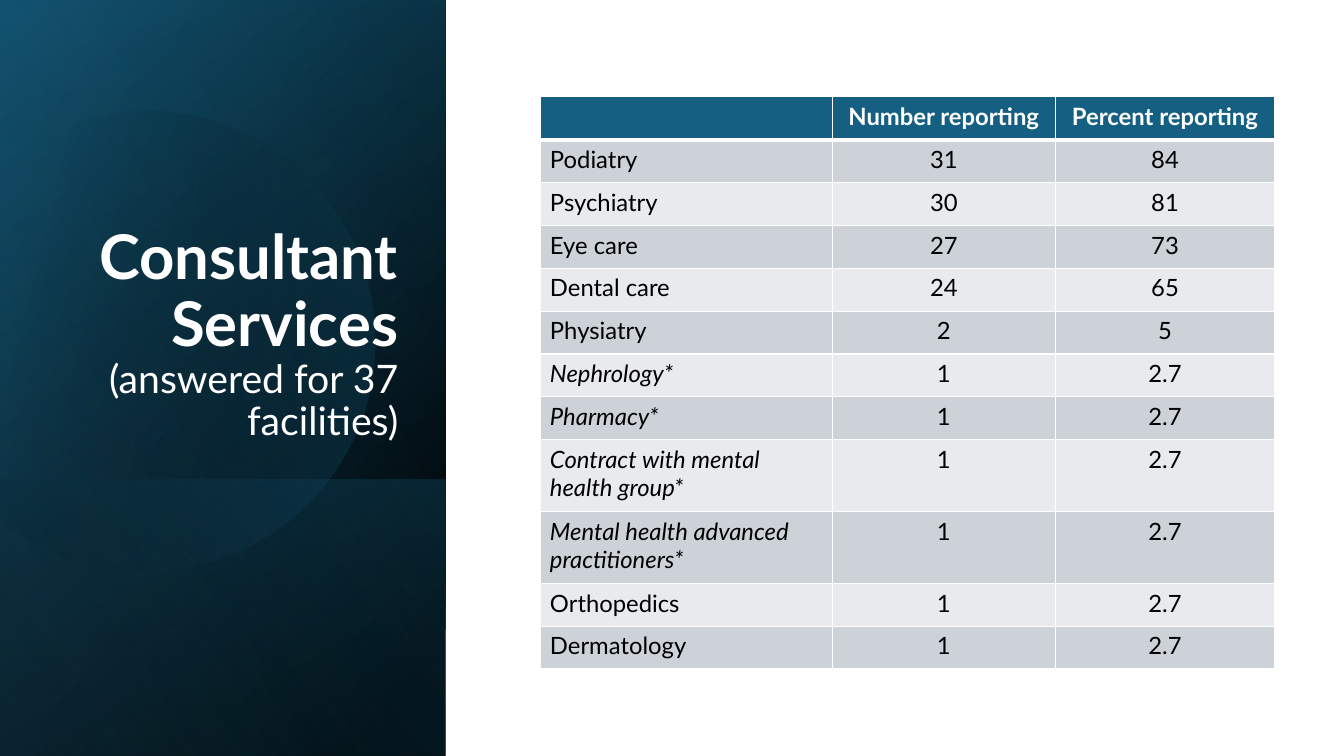
import math
from lxml import etree
from pptx import Presentation
from pptx import util as u
from pptx.dml.color import RGBColor
from pptx.enum import shapes, text
from pptx.oxml import parse_xml
from pptx.oxml.ns import nsdecls, qn

TITLE = "Consultant Services "
SUBTITLE = "(answered for 37 facilities)"
HEADER = ("", "Number reporting", "Percent reporting")
SERVICES = [
    ("Podiatry", "31", "84"),
    ("Psychiatry", "30", "81"),
    ("Eye care", "27", "73"),
    ("Dental care", "24", "65"),
    ("Physiatry", "2", "5"),
    ("Nephrology*", "1", "2.7"),
    ("Pharmacy*", "1", "2.7"),
    ("Contract with mental health group*", "1", "2.7"),
    ("Mental health advanced practitioners*", "1", "2.7"),
    ("Orthopedics", "1", "2.7"),
    ("Dermatology", "1", "2.7"),
]

THEME = {
    "font": "Lato", "title": 44, "subtitle": 28, "cell": 17,
    "white": "FFFFFF", "black": "000000", "teal": "156082",
    "deep": "104862", "sky": "46B1E1", "bands": ("CCD2D8", "E8EAED"),
}
WHITE, BLACK, TEAL = THEME["white"], THEME["black"], THEME["teal"]

# Side panel, in cm: top, height, gradient angle, stops of (position, colour, opacity)
PANEL_W, PAGE_W, PAGE_H = 11.23, 33.87, 19.05
BASE = [
    (0, PAGE_H, 50, [(8, BLACK, 100), (100, THEME["deep"], 100)]),
    (0, PAGE_H, 30, [(0, BLACK, 0), (99, TEAL, 46)]),
    (12.09, 6.96, 130, [(2, TEAL, 29), (100, BLACK, 30)]),
]
TOP_GLOW = (0, PAGE_H, 120, [(0, BLACK, 0), (99, THEME["sky"], 11)])

# Disc outline as it lies on the page: one point is a line, three are a Bezier curve
DISC_START = (3.78, 2.79)
DISC = [
    [(6.25, 2.84), (8.51, 4.5), (9.22, 6.99)],
    [(10.11, 10.08), (8.33, 13.28), (5.26, 14.17)],
    [(3.33, 14.73), (1.35, 14.25), (-0.08, 13.06)],
    [(-0.38, 12.78)], [(-0.38, 4.45)], [(0, 4.09)],
    [(0.58, 3.61), (1.27, 3.25), (2.03, 3.02)],
    [(2.62, 2.87), (3.2, 2.79), DISC_START],
]
DISC_CENTRE, DISC_ROTATION = (4.03, 8.5), 343.9

TITLE_BOX = (0.64, 4.67, 9.65, 6.65)
TABLE_LEFT, TABLE_TOP = 13.61, 2.44
COLS = (7.37, 5.61, 5.54)
ROW_H, TALL_ROW_H, TALL_TEXT = 1.08, 1.81, 20


def apply(target, values):
    for name, value in values.items():
        setattr(target, name, value)


def style_run(r, size, color, bold, italic=False):
    apply(r.font, {"name": THEME["font"], "size": u.Pt(size), "bold": bold, "italic": italic})
    r.font.color.rgb = RGBColor.from_string(color)


def paint_gradient(sp, angle, stops):
    """Fill with a linear gradient that turns with the shape; no line or shadow."""
    sp.shadow.inherit = False
    sp.line.fill.background()
    sp.fill.background()
    grad = parse_xml(f'<a:gradFill {nsdecls("a")} rotWithShape="1"><a:gsLst/></a:gradFill>')
    for pos, color, opacity in stops:
        gs = etree.SubElement(grad[0], qn("a:gs"), pos=str(pos * 1000))
        clr = etree.SubElement(gs, qn("a:srgbClr"), val=color)
        etree.SubElement(clr, qn("a:alpha"), val=str(opacity * 1000))
    etree.SubElement(grad, qn("a:lin"), ang=str(angle * 60000), scaled="0")
    spPr = sp._element.spPr
    spPr.replace(spPr.find(qn("a:noFill")), grad)


def add_panel(s, top, height, angle, stops):
    """Cover the panel width with a mirrored rectangle turned a quarter."""
    left, box_top = (PANEL_W - height) / 2, top + (height - PANEL_W) / 2
    sp = s.shapes.add_shape(shapes.MSO_SHAPE.RECTANGLE,
                            *map(u.Cm, (left, box_top, height, PANEL_W)))
    sp.rotation = 90
    sp._element.spPr.xfrm.set("flipH", "1")
    paint_gradient(sp, angle, stops)


def bezier(p0, p1, p2, p3, steps=16):
    for k in range(1, steps + 1):
        t = k / steps
        weights = ((1 - t) ** 3, 3 * t * (1 - t) ** 2, 3 * t * t * (1 - t), t ** 3)
        yield tuple(sum(w * p[i] for w, p in zip(weights, (p0, p1, p2, p3))) for i in (0, 1))


def unrotate(point):
    """Turn a page point back to where it lies before the disc is rotated."""
    a = math.radians(360 - DISC_ROTATION)
    cx, cy = DISC_CENTRE
    x, y = point[0] - cx, point[1] - cy
    return (u.Cm(cx + x * math.cos(a) - y * math.sin(a)),
            u.Cm(cy + x * math.sin(a) + y * math.cos(a)))


def add_disc(s):
    outline = [DISC_START]
    for seg in DISC:
        outline += bezier(outline[-1], *seg) if len(seg) == 3 else seg
    points = [unrotate(p) for p in outline]
    builder = s.shapes.build_freeform(*points[0])
    builder.add_line_segments(points[1:], close=True)
    sp = builder.convert_to_shape()
    sp.rotation = DISC_ROTATION
    paint_gradient(sp, 30, [(29, BLACK, 0), (100, TEAL, 43)])


def place_title(s):
    title = s.shapes.title
    apply(title, dict(zip(("left", "top", "width", "height"), map(u.Cm, TITLE_BOX))))
    s.shapes._spTree.append(title._element)
    tf = title.text_frame
    apply(tf, {"word_wrap": True, "vertical_anchor": text.MSO_ANCHOR.BOTTOM,
               "auto_size": text.MSO_AUTO_SIZE.NONE})
    p = tf.paragraphs[0]
    apply(p, {"alignment": text.PP_ALIGN.RIGHT, "line_spacing": 0.9})
    for words, size, bold in ((TITLE, THEME["title"], True), (SUBTITLE, THEME["subtitle"], False)):
        r = p.add_run()
        r.text = words
        style_run(r, size, WHITE, bold)


def set_borders(cell, top, bottom):
    tcPr = cell._tc.get_or_add_tcPr()
    for i, (side, width) in enumerate((("L", 1), ("R", 1), ("T", top), ("B", bottom))):
        tcPr.insert(i, parse_xml(
            f'<a:ln{side} {nsdecls("a")} w="{u.Pt(width)}"><a:solidFill>'
            f'<a:srgbClr val="{WHITE}"/></a:solidFill></a:ln{side}>'))


def fill_cell(cell, words, row, col):
    head = row == 0
    cell.fill.solid()
    cell.fill.fore_color.rgb = RGBColor.from_string(TEAL if head else THEME["bands"][(row - 1) % 2])
    apply(cell, {"margin_left": u.Cm(0.25), "margin_right": u.Cm(0.25),
                 "margin_top": u.Cm(0.13), "margin_bottom": u.Cm(0.13)})
    set_borders(cell, top=3 if row == 1 else 1, bottom=3 if head else 1)
    p = cell.text_frame.paragraphs[0]
    p.font.size = u.Pt(THEME["cell"])
    if col:
        p.alignment = text.PP_ALIGN.CENTER
    if words:
        r = p.add_run()
        r.text = words
        style_run(r, THEME["cell"], WHITE if head else BLACK, head, words.endswith("*"))


def add_services_table(s):
    rows = [HEADER, *SERVICES]
    heights = [TALL_ROW_H if len(row[0]) > TALL_TEXT else ROW_H for row in rows]
    frame = s.shapes.add_table(len(rows), len(COLS), *map(
        u.Cm, (TABLE_LEFT, TABLE_TOP, sum(COLS), sum(heights))))
    table = frame.table
    for column, width in zip(table.columns, COLS):
        column.width = u.Cm(width)
    for i, (row, height) in enumerate(zip(rows, heights)):
        table.rows[i].height = u.Cm(height)
        for j, words in enumerate(row):
            fill_cell(table.cell(i, j), words, i, j)


def main():
    prs = Presentation()
    prs.slide_width, prs.slide_height = u.Cm(PAGE_W), u.Cm(PAGE_H)
    s = prs.slides.add_slide(prs.slide_layouts[5])
    for panel in BASE:
        add_panel(s, *panel)
    add_disc(s)
    add_panel(s, *TOP_GLOW)
    place_title(s)
    add_services_table(s)
    prs.save("out.pptx")


if __name__ == "__main__":
    main()
